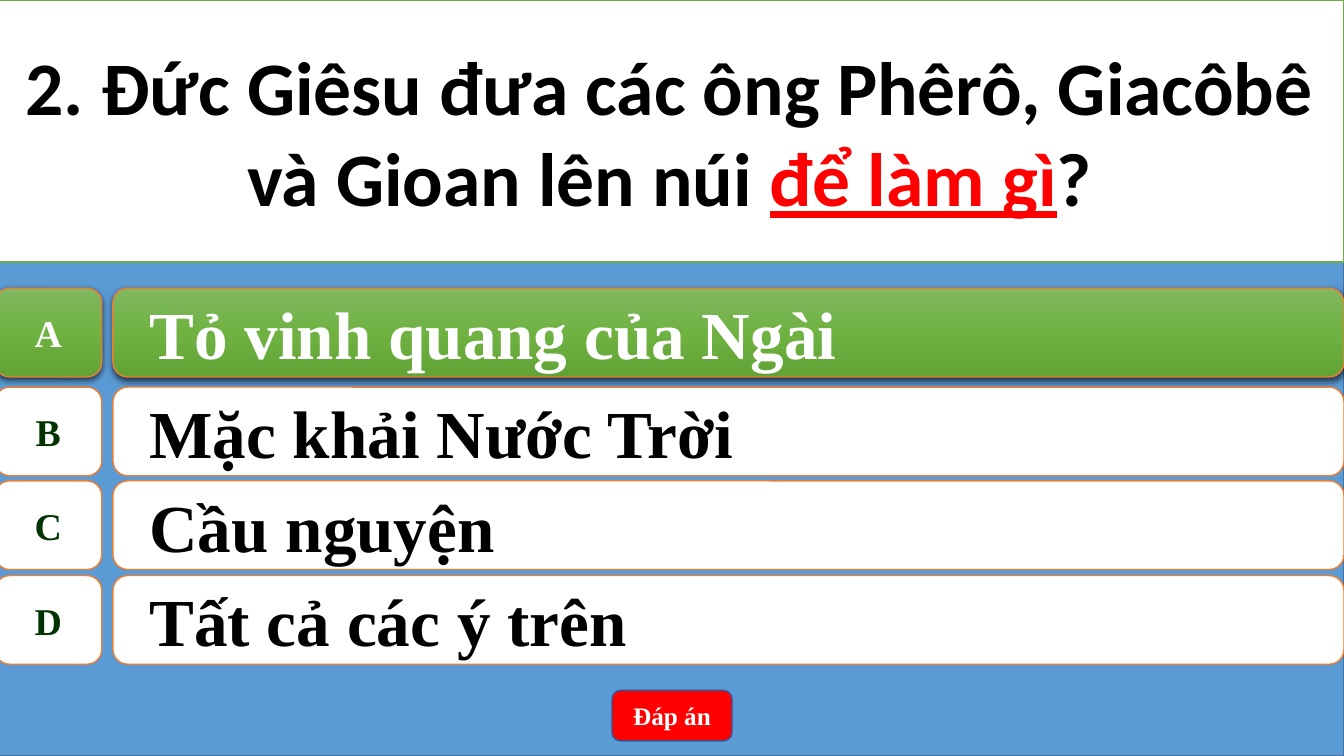
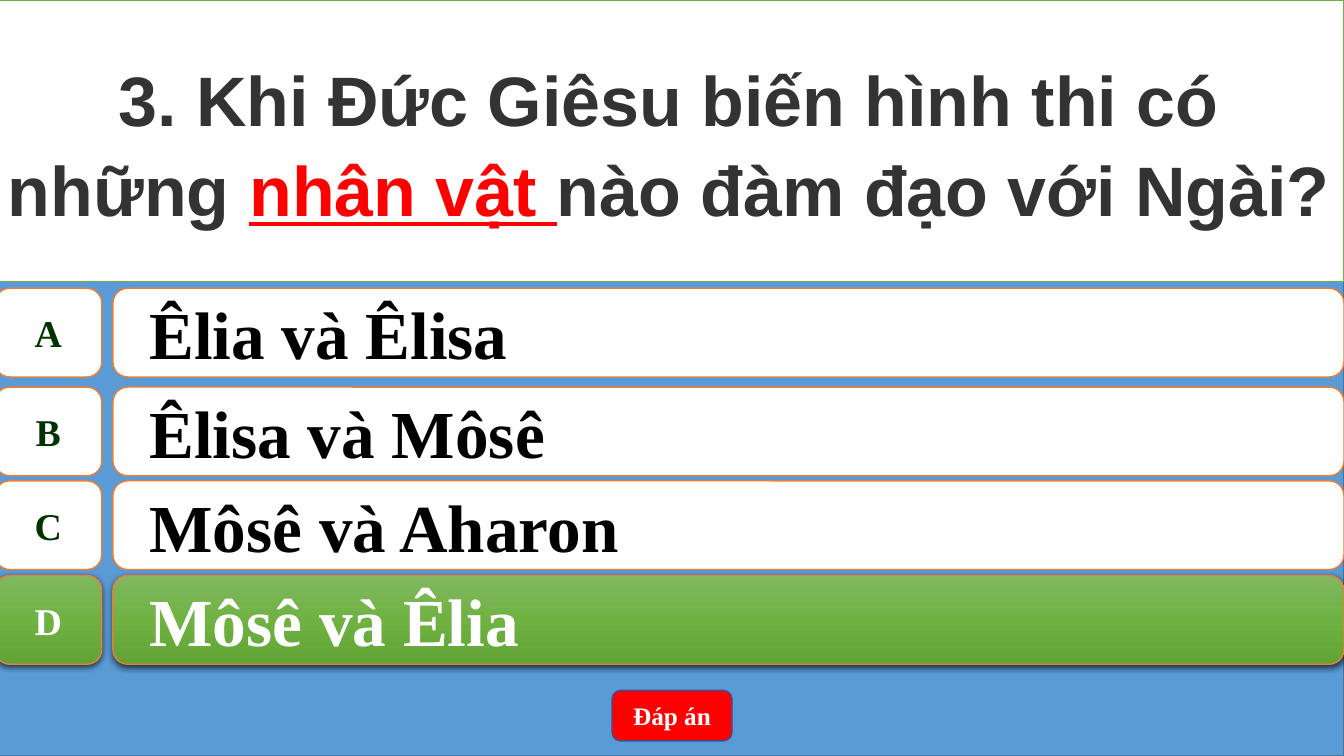
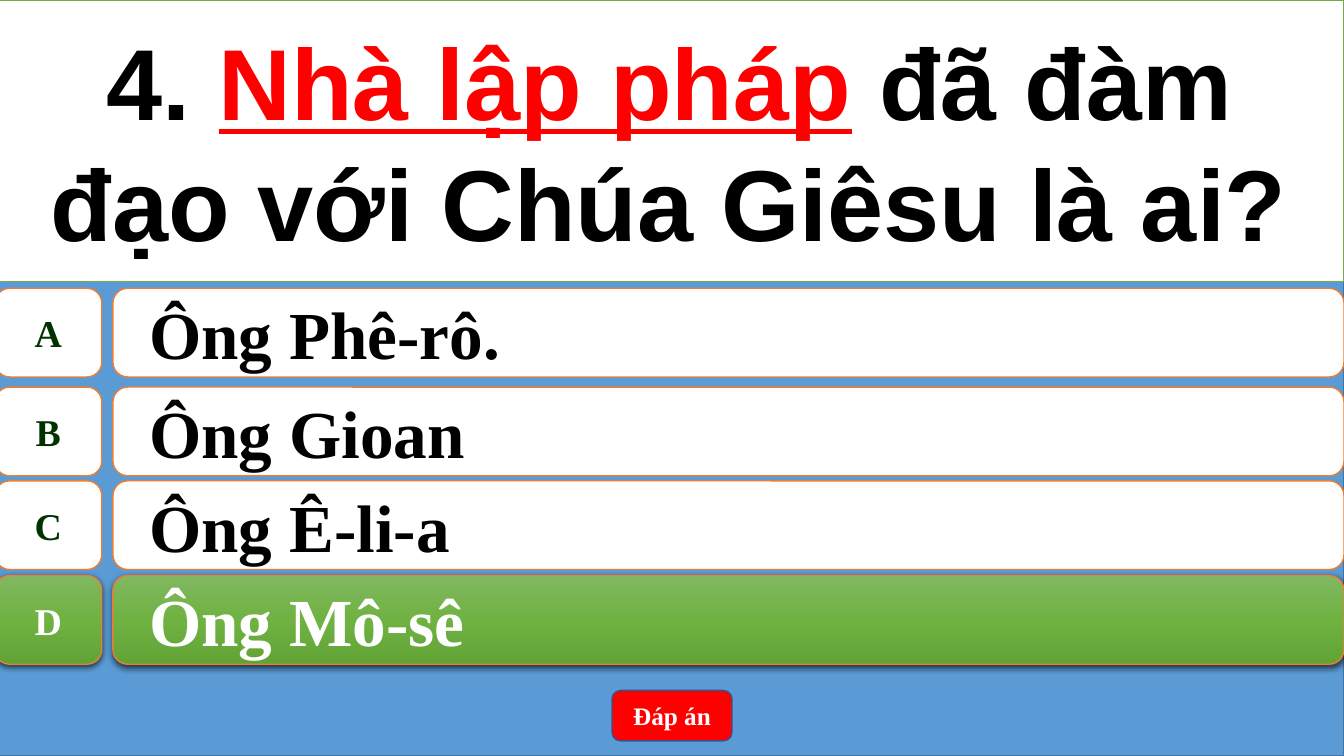
"""Build three multiple-choice quiz slides with the right answer highlighted."""
from copy import deepcopy
from dataclasses import dataclass

from pptx import Presentation, util as u
from pptx.dml.color import RGBColor
from pptx.enum import shapes, text
from pptx.oxml import parse_xml
from pptx.oxml.ns import nsdecls, qn

WHITE, BLACK, RED, ORANGE = "FFFFFF", "000000", "FF0000", "ED7D31"
BLUE, BLUE_EDGE, BUTTON_EDGE = "5B9BD5", "43739E", "325491"
GREEN_EDGE, DARK_GREEN = "70AD47", "003300"
GREEN_STOPS = ((0, "81B861"), (0.5, "6FB242"), (1, "62A336"))
SERIF = "Times New Roman"
LEFT, TILE_WIDTH, BAR_LEFT, SLIDE_WIDTH, ROW_HEIGHT = -0.05, 1.06, 1.12, 13.33, 0.88
ROW_TOPS = (2.86, 3.84, 4.77, 5.71)
SHAPE = shapes.MSO_SHAPE


@dataclass(frozen=True)
class Box:
    left: float
    top: float
    width: float
    height: float


@dataclass(frozen=True)
class Style:
    size: float
    color: str
    font: str = SERIF
    underline: bool = False


@dataclass(frozen=True)
class Question:
    before: str
    key: str
    after: str
    style: Style
    height: float
    spacing: float
    answers: tuple[str, str, str, str]
    correct: int


QUESTIONS = (
    Question("2. Đức Giêsu đưa các ông Phêrô, Giacôbê và Gioan lên núi ", "để làm gì", "?",
             Style(54, BLACK, "Calibri"), 2.6, 1.0,
             ("Tỏ vinh quang của Ngài", "Mặc khải Nước Trời", "Cầu nguyện", "Tất cả các ý trên"), 0),
    Question("3. Khi Đức Giêsu biến hình thi có những ", "nhân vật ", "nào đàm đạo với Ngài?",
             Style(50, "333333", "Arial"), 2.79, 1.07,
             ("Êlia và Êlisa", "Êlisa và Môsê", "Môsê và Aharon", "Môsê và Êlia"), 3),
    Question("4. ", "Nhà lập pháp", " đã đàm đạo với Chúa Giêsu là ai?",
             Style(72, BLACK, "Arial"), 2.79, 1.0,
             ("Ông Phê-rô.", "Ông Gioan", "Ông Ê-li-a", "Ông Mô-sê"), 3),
)


def rgb(value: str) -> RGBColor:
    """Turn a hex string into a colour."""
    return RGBColor.from_string(value)


def paint(shape, fill: str, line: str) -> None:
    """Give a shape a plain fill and a thin outline."""
    shape.fill.solid()
    shape.fill.fore_color.rgb = rgb(fill)
    shape.line.color.rgb = rgb(line)
    shape.line.width = u.Pt(1)


def add_box(slide, kind, box: Box, fill: str, line: str):
    """Add a preset shape without a shadow."""
    shape = slide.shapes.add_shape(kind, *map(u.Inches, (box.left, box.top, box.width, box.height)))
    shape.shadow.inherit = False
    paint(shape, fill, line)
    return shape


def add_run(paragraph, words: str, style: Style) -> None:
    """Append a bold run in the given style."""
    run = paragraph.add_run()
    run.text = words
    formats = {"name": style.font, "size": u.Pt(style.size), "bold": True,
               "underline": style.underline}
    for name, value in formats.items():
        setattr(run.font, name, value)
    run.font.color.rgb = rgb(style.color)


def open_paragraph(shape, align, wrap: bool = True):
    """Prepare the text frame and return its first paragraph."""
    formats = {"word_wrap": wrap, "auto_size": text.MSO_AUTO_SIZE.NONE,
               "vertical_anchor": text.MSO_ANCHOR.MIDDLE}
    for name, value in formats.items():
        setattr(shape.text_frame, name, value)
    paragraph = shape.text_frame.paragraphs[0]
    paragraph.alignment = align
    return paragraph


def highlight(shape) -> None:
    """Fill a shape with the green gradient and cast a soft shadow."""
    shape.fill.gradient()
    shape.fill.gradient_angle = 270
    properties = shape.element.spPr
    stop_list = properties.find(".//" + qn("a:gsLst"))
    stop_list.append(deepcopy(stop_list[-1]))
    for stop, (position, color) in zip(shape.fill.gradient_stops, GREEN_STOPS):
        stop.position = position
        stop.color.rgb = rgb(color)
    properties.find(qn("a:effectLst")).append(parse_xml(
        f'<a:outerShdw {nsdecls("a")} blurRad="{u.Pt(4.5)}" dist="{u.Pt(1.5)}" dir="5400000"'
        f' rotWithShape="0"><a:srgbClr val="{BLACK}"><a:alpha val="63000"/></a:srgbClr>'
        '</a:outerShdw>'))


def add_answer(slide, letter: str, answer: str, top: float, correct: bool) -> None:
    """Draw one answer row: a letter tile and an answer bar."""
    tile = add_box(slide, SHAPE.FLOWCHART_ALTERNATE_PROCESS,
                   Box(LEFT, top, TILE_WIDTH, ROW_HEIGHT), WHITE, ORANGE)
    bar = add_box(slide, SHAPE.ROUNDED_RECTANGLE,
                  Box(BAR_LEFT, top, SLIDE_WIDTH - BAR_LEFT, ROW_HEIGHT), WHITE, ORANGE)
    if correct:
        highlight(tile)
        highlight(bar)
    add_run(open_paragraph(tile, text.PP_ALIGN.CENTER, False), letter,
            Style(27, WHITE if correct else DARK_GREEN))
    paragraph = open_paragraph(bar, text.PP_ALIGN.LEFT)
    indents = paragraph._p.get_or_add_pPr()
    for name, value in {"marL": 0.5, "indent": -0.28}.items():
        indents.set(name, str(u.Inches(value)))
    add_run(paragraph, answer, Style(48, WHITE if correct else BLACK))


def add_title(slide, question: Question) -> None:
    """Format the title placeholder as the question panel, in front of the backdrop."""
    title = slide.shapes.title
    places = {"left": LEFT, "top": 0, "width": SLIDE_WIDTH - LEFT, "height": question.height}
    for name, value in places.items():
        setattr(title, name, u.Inches(value))
    paint(title, WHITE, GREEN_EDGE)
    paragraph = open_paragraph(title, text.PP_ALIGN.CENTER)
    paragraph.line_spacing = question.spacing
    key_style = Style(question.style.size, RED, question.style.font, True)
    add_run(paragraph, question.before, question.style)
    add_run(paragraph, question.key, key_style)
    add_run(paragraph, question.after, question.style)
    title.element.getparent().append(title.element)


def add_question(presentation, question: Question) -> None:
    """Add one quiz slide."""
    slide = presentation.slides.add_slide(presentation.slide_layouts[5])
    add_box(slide, SHAPE.RECTANGLE, Box(LEFT, 0, SLIDE_WIDTH - LEFT, 7.5), BLUE, BLUE_EDGE)
    for index, (letter, answer, top) in enumerate(zip("ABCD", question.answers, ROW_TOPS)):
        add_answer(slide, letter, answer, top, index == question.correct)
    button = add_box(slide, SHAPE.ROUNDED_RECTANGLE, Box(6.07, 6.85, 1.19, 0.5), RED, BUTTON_EDGE)
    add_run(open_paragraph(button, text.PP_ALIGN.CENTER), "Đáp án", Style(18, WHITE))
    add_title(slide, question)


def main() -> None:
    """Build and save the quiz."""
    presentation = Presentation()
    presentation.slide_width = u.Inches(SLIDE_WIDTH)
    presentation.slide_height = u.Inches(7.5)
    for question in QUESTIONS:
        add_question(presentation, question)
    presentation.save("out.pptx")


if __name__ == "__main__":
    main()
